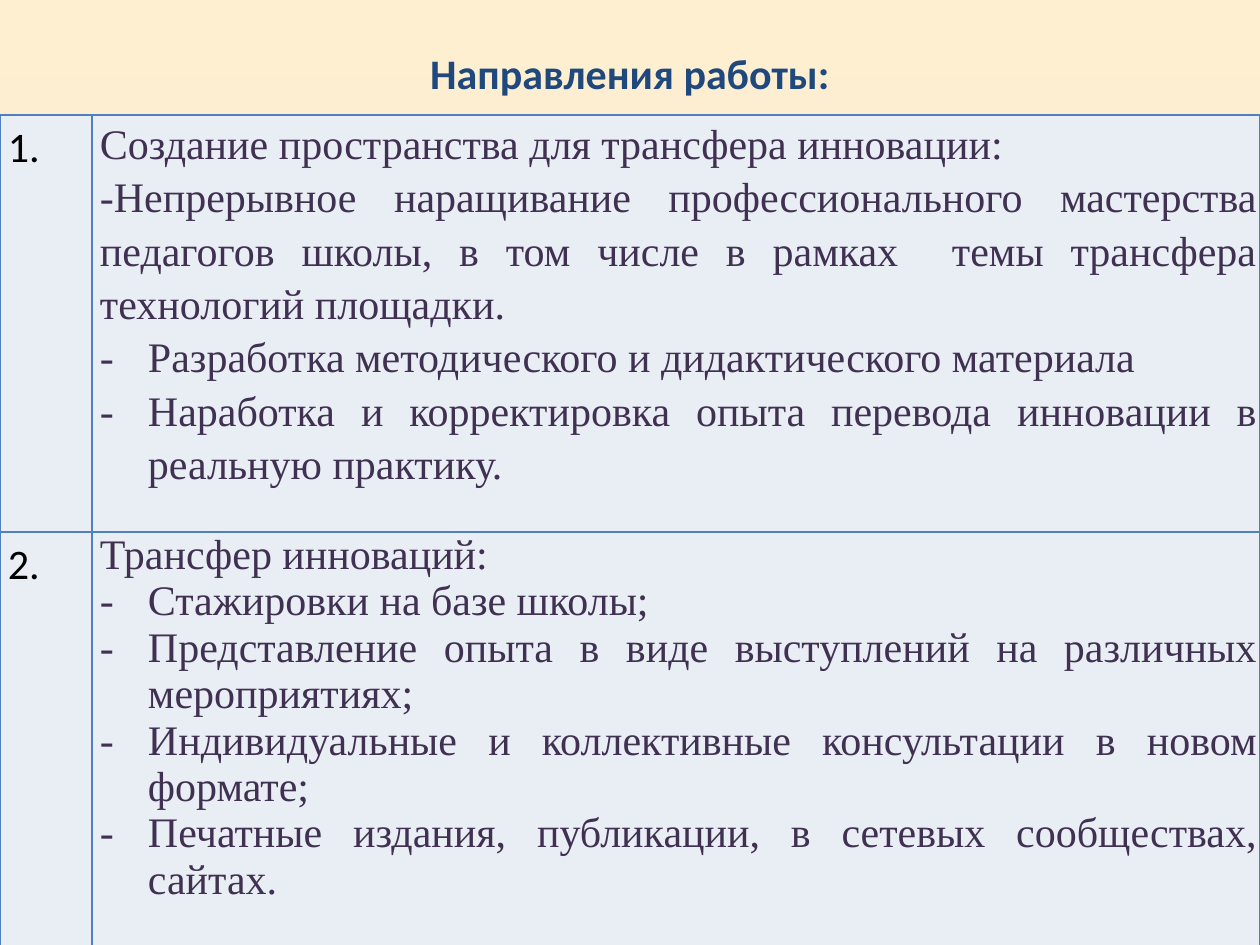
from copy import deepcopy

from lxml import etree
from pptx import Presentation
from pptx import util as u
from pptx.dml.color import RGBColor
from pptx.enum import text
from pptx.oxml.ns import qn

PX = 914400 // 126
WIDE, HIGH = 1260, 945
INDENT = 48
SIZE = 24

# Each row: number, line spacing, plain paragraphs, dashed paragraphs
ROWS = [
    ("1.", 1.15,
     ["Создание пространства для трансфера инновации:",
      "-Непрерывное наращивание профессионального мастерства педагогов школы, "
      "в том числе в рамках  темы трансфера технологий площадки."],
     ["Разработка методического и дидактического материала",
      "Наработка и корректировка опыта перевода инновации в реальную практику."]),
    ("2.", 1.0,
     ["Трансфер инноваций:"],
     ["Стажировки на базе школы;",
      "Представление опыта в виде выступлений на различных мероприятиях;",
      "Индивидуальные и коллективные консультации в новом формате;",
      "Печатные издания, публикации, в сетевых сообществах, сайтах."]),
]


def px(n):
    return u.Emu(n * PX)


def rgb(code):
    return RGBColor.from_string(code)


def style(par, face, color, align, bold=False):
    par.alignment = align
    font = par.font
    font.name, font.size, font.bold = face, u.Pt(SIZE), bold
    font.color.rgb = rgb(color)


def dash(par):
    props = par._p.get_or_add_pPr()
    props.set("marL", str(px(INDENT)))
    props.set("indent", str(-px(INDENT)))
    etree.SubElement(props, qn("a:buFont"), typeface="Times New Roman")
    etree.SubElement(props, qn("a:buChar"), char="-")


def border(cell, color):
    props = cell._tc.get_or_add_tcPr()
    for i, side in enumerate(("lnL", "lnR", "lnT", "lnB")):
        line = etree.Element(qn("a:" + side), w=str(u.Pt(1)))
        fill = etree.SubElement(line, qn("a:solidFill"))
        etree.SubElement(fill, qn("a:srgbClr"), val=color)
        props.insert(i, line)


def write(cell, plain, dashed, gap, face, color):
    cell.fill.solid()
    cell.fill.fore_color.rgb = rgb("E9EDF4")
    cell.margin_left, cell.margin_right = px(8), px(3)
    cell.margin_top = cell.margin_bottom = 0
    border(cell, "4F81BD")
    frame = cell.text_frame
    for i, words in enumerate(plain + dashed):
        par = frame.add_paragraph() if i else frame.paragraphs[0]
        par.text = words
        par.line_spacing = gap
        if i >= len(plain):
            dash(par)
        style(par, face, color, text.PP_ALIGN.JUSTIFY)


def backdrop(slide):
    fill = slide.background.fill
    fill.gradient()
    fill.gradient_angle = 270
    stops = slide.element.find(".//" + qn("a:gsLst"))
    stops.append(deepcopy(stops[-1]))
    tints = [(0, "FFEFD1"), (0.65, "F0EBD5"), (1, "D1C39F")]
    for stop, (place, color) in zip(fill.gradient_stops, tints):
        stop.position = place
        stop.color.rgb = rgb(color)


def title(slide, x, y, w, h):
    frame = slide.shapes.add_textbox(px(x), px(y), px(w), px(h)).text_frame
    frame.word_wrap = True
    frame.vertical_anchor = text.MSO_ANCHOR.MIDDLE
    par = frame.paragraphs[0]
    par.text = "Направления работы:"
    style(par, "Calibri", "1F497D", text.PP_ALIGN.CENTER, bold=True)


def table(slide, x, y, w, h):
    grid = slide.shapes.add_table(len(ROWS), 2, px(x), px(y), px(w), px(h)).table
    grid.columns[0].width = px(92)
    grid.columns[1].width = px(w - 92)
    for i, (num, gap, plain, dashed) in enumerate(ROWS):
        grid.rows[i].height = px(h // len(ROWS))
        write(grid.cell(i, 0), [num], [], 1.15, "Calibri", "000000")
        write(grid.cell(i, 1), plain, dashed, gap, "Times New Roman", "403152")


def main():
    deck = Presentation()
    deck.slide_width, deck.slide_height = px(WIDE), px(HIGH)
    slide = deck.slides.add_slide(deck.slide_layouts[6])
    backdrop(slide)
    title(slide, 63, 38, 1134, 70)
    table(slide, 0, 115, WIDE, 834)
    deck.save("out.pptx")


if __name__ == "__main__":
    main()
